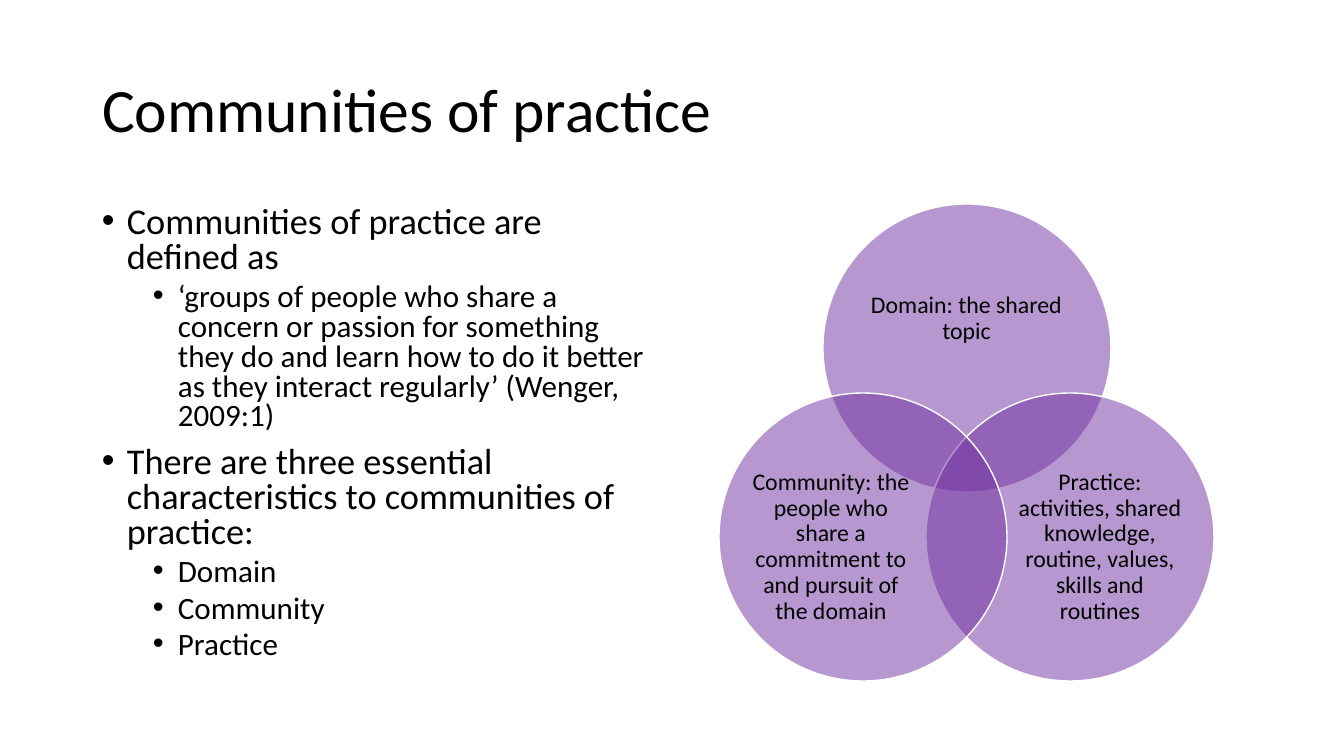
import pptx
import pptx.dml.color
import pptx.enum.shapes
import pptx.enum.text
import pptx.oxml.ns
import pptx.util
from lxml import etree

TITLE = "Communities of practice"
BODY = [  # (level, text)
    (0, "Communities of practice are defined as"),
    (1, "‘groups of people who share a concern or passion for something they do "
        "and learn how to do it better as they interact regularly’ (Wenger, 2009:1)"),
    (0, "There are three essential characteristics to communities of practice:"),
    (1, "Domain"),
    (1, "Community"),
    (1, "Practice"),
]
CIRCLES = [  # (circle left and top, label box, label), back to front
    ((823, 204), (861, 254, 211, 129), "Domain: the shared topic"),
    ((926, 393), (1014, 468, 172, 158),
     "Practice: activities, shared knowledge, routine, values, skills and routines"),
    ((719, 393), (745, 468, 172, 158),
     "Community: the people who share a commitment to and pursuit of the domain"),
]
DIAMETER = 288
LEVELS = [  # (size, space before, left indent in px)
    (25.9, 10, 25),
    (22.2, 5, 76),
]
HANGING = 25
COLORS = {"text": "000000", "circle": "7030A0", "outline": "FFFFFF"}
FONT = "Calibri"
ANCHOR = pptx.enum.text.MSO_ANCHOR
ALIGN = pptx.enum.text.PP_ALIGN


def px(n):
    return round(n * 914400 / 100.8)


def color(name):
    return pptx.dml.color.RGBColor.from_string(COLORS[name])


def add_element(parent, tag, **attributes):
    return etree.SubElement(parent, pptx.oxml.ns.qn(tag), attributes)


def place(sp, left, top, width, height):
    sp.left, sp.top, sp.width, sp.height = map(px, (left, top, width, height))


def style(p, size, spacing, align=ALIGN.LEFT):
    p.alignment = align
    p.line_spacing = spacing
    p.font.name = FONT
    p.font.size = pptx.util.Pt(size)
    p.font.color.rgb = color("text")


def add_title(s):
    sp = s.shapes.title
    place(sp, 92, 40, 1159, 146)
    tf = sp.text_frame
    tf.text = TITLE
    tf.word_wrap = True
    tf.vertical_anchor = ANCHOR.MIDDLE
    style(tf.paragraphs[0], 44, 0.9)


def add_body(s):
    tf = s.shapes.add_textbox(*map(px, (92, 202, 572, 480))).text_frame
    tf.word_wrap = True
    for i, (level, text) in enumerate(BODY):
        p = tf.add_paragraph() if i else tf.paragraphs[0]
        p.text = text
        p.level = level
        size, before, indent = LEVELS[level]
        pPr = p._p.get_or_add_pPr()
        pPr.set("marL", str(px(indent)))
        pPr.set("indent", str(px(-HANGING)))
        add_element(pPr, "a:buFont", typeface="Arial")
        add_element(pPr, "a:buChar", char="•")
        style(p, size, 0.8)
        p.space_before = pptx.util.Pt(before if i else 0)


def add_circle(s, left, top):
    sp = s.shapes.add_shape(pptx.enum.shapes.MSO_SHAPE.OVAL,
                            *map(px, (left, top, DIAMETER, DIAMETER)))
    sp.shadow.inherit = False
    sp.fill.solid()
    sp.fill.fore_color.rgb = color("circle")
    rgb = sp.element.spPr.find(pptx.oxml.ns.qn("a:solidFill"))[0]
    add_element(rgb, "a:alpha", val="50000")
    sp.line.color.rgb = color("outline")
    sp.line.width = pptx.util.Pt(1)


def add_label(s, box, text):
    tf = s.shapes.add_textbox(*map(px, box)).text_frame
    tf.word_wrap = True
    tf.vertical_anchor = ANCHOR.MIDDLE
    tf.margin_left = tf.margin_right = tf.margin_top = tf.margin_bottom = 0
    tf.text = text
    style(tf.paragraphs[0], 17, 0.9, ALIGN.CENTER)


def main():
    prs = pptx.Presentation()
    prs.slide_width, prs.slide_height = px(1344), px(756)
    s = prs.slides.add_slide(prs.slide_layouts[5])
    add_title(s)
    add_body(s)
    for corner, box, text in CIRCLES:
        add_circle(s, *corner)
        add_label(s, box, text)
    prs.save("out.pptx")


if __name__ == "__main__":
    main()
